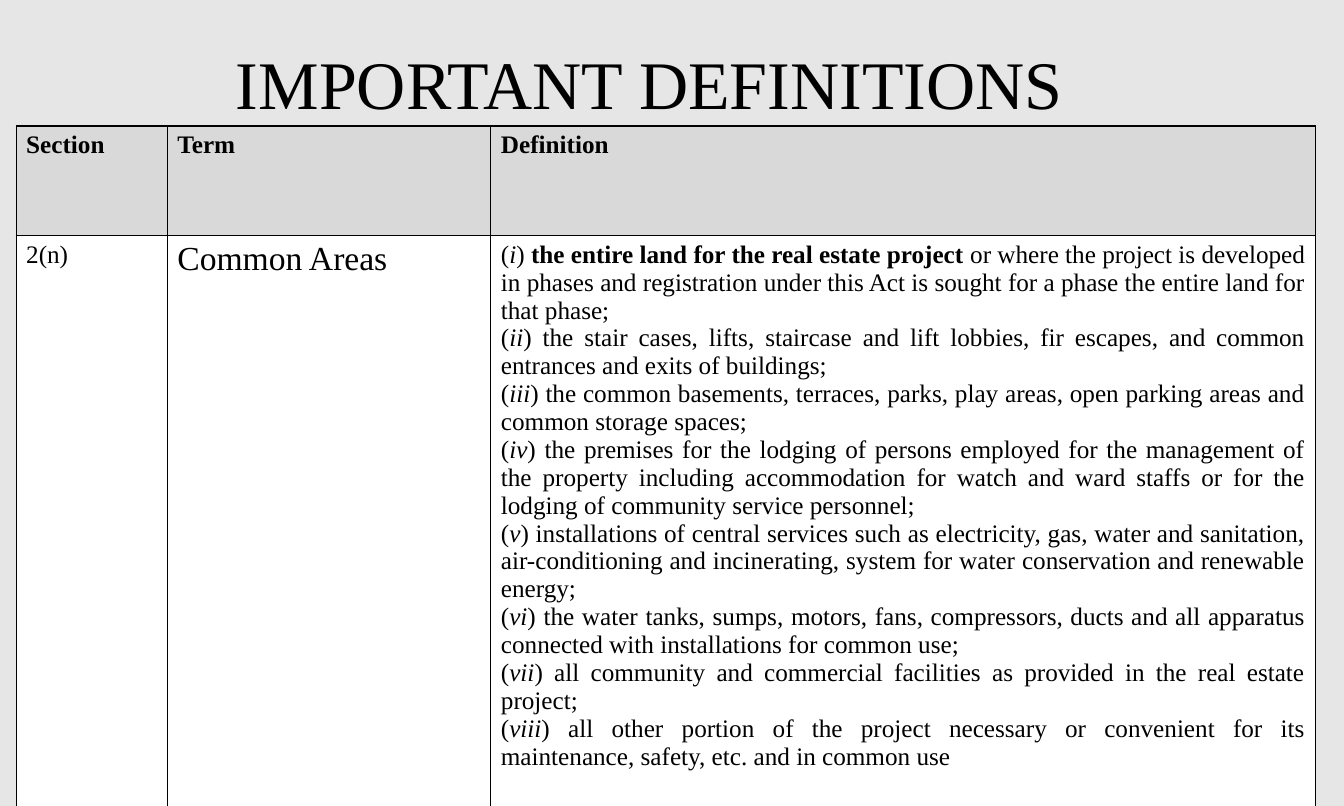
from lxml import etree
from pptx import Presentation
from pptx import util as u
from pptx.dml.color import RGBColor
from pptx.enum import text
from pptx.oxml.ns import qn

HUES = {"back": "E7E6E6", "head": "D9D9D9", "body": "FFFFFF", "ink": "000000"}
FONT = "Times New Roman"
WIDE, HIGH = 40 / 3, 8
TITLE = "IMPORTANT DEFINITIONS "
HEADS = ["Section", "Term", "Definition"]
BOLD = "the entire land for the real estate project "
ITEMS = [
    ("i", "or where the project is developed in phases and registration under this Act is sought for a phase the entire land for that phase;"),
    ("ii", "the stair cases, lifts, staircase and lift lobbies, fir escapes, and common entrances and exits of buildings;"),
    ("iii", "the common basements, terraces, parks, play areas, open parking areas and common storage spaces;"),
    ("iv", "the premises for the lodging of persons employed for the management of the property including accommodation for watch and ward staffs or for the lodging of community service personnel;"),
    ("v", "installations of central services such as electricity, gas, water and sanitation, air-conditioning and incinerating, system for water conservation and renewable energy;"),
    ("vi", "the water tanks, sumps, motors, fans, compressors, ducts and all apparatus connected with installations for common use;"),
    ("vii", "all community and commercial facilities as provided in the real estate project;"),
    ("viii", "all other portion of the project necessary or convenient for its maintenance, safety, etc. and in common use"),
]
CLAUSES = [
    [("(", ""), (num, "i"), (") ", ""), (BOLD if num == "i" else "", "b"), (words, "")]
    for num, words in ITEMS
]
ROWS = [
    ("head", [([[(head, "b")]], 18) for head in HEADS]),
    ("body", [([[("2(n)", "")]], 18), ([[("Common Areas", "")]], 24), (CLAUSES, 18)]),
]
COLS = [1.5, 3.21, 8.18]
TALL = [1.09, 4.77]
AREA = (0.16, 1.25, sum(COLS), 6.59)


def tint(name):
    return RGBColor.from_string(HUES[name])


def write(para, parts, size, align):
    para.alignment = align
    for words, style in parts:
        if words:
            run = para.add_run()
            run.text = words
            font = run.font
            font.name, font.size = FONT, u.Pt(size)
            font.bold, font.italic = style == "b", style == "i"
            font.color.rgb = tint("ink")


def edge(cell):
    props = cell._tc.get_or_add_tcPr()
    for spot, side in enumerate(("lnL", "lnR", "lnT", "lnB")):
        line = etree.Element(qn("a:" + side), w=str(u.Pt(1)))
        fill = etree.SubElement(line, qn("a:solidFill"))
        etree.SubElement(fill, qn("a:srgbClr"), val=HUES["ink"])
        props.insert(spot, line)


def main():
    deck = Presentation()
    deck.slide_width, deck.slide_height = u.Inches(WIDE), u.Inches(HIGH)
    slide = deck.slides.add_slide(deck.slide_layouts[6])
    slide.background.fill.solid()
    slide.background.fill.fore_color.rgb = tint("back")

    box = slide.shapes.add_textbox(*map(u.Inches, (0.17, 0.51, 12.71, 0.77)))
    frame = box.text_frame
    frame.word_wrap = True
    frame.vertical_anchor = text.MSO_ANCHOR.BOTTOM
    frame.paragraphs[0].line_spacing = 0.9
    write(frame.paragraphs[0], [(TITLE, "")], 48.6, text.PP_ALIGN.CENTER)

    grid = slide.shapes.add_table(len(ROWS), len(COLS), *map(u.Inches, AREA))
    table = grid.table
    for col, width in zip(table.columns, COLS):
        col.width = u.Inches(width)
    for row, height, (hue, cells) in zip(table.rows, TALL, ROWS):
        row.height = u.Inches(height)
        for cell, (paras, size) in zip(row.cells, cells):
            cell.fill.solid()
            cell.fill.fore_color.rgb = tint(hue)
            edge(cell)
            frame = cell.text_frame
            for spot, parts in enumerate(paras):
                para = frame.add_paragraph() if spot else frame.paragraphs[0]
                write(para, parts, size, text.PP_ALIGN.JUSTIFY)
    grid.height = u.Inches(AREA[3])

    deck.save("out.pptx")


if __name__ == "__main__":
    main()
